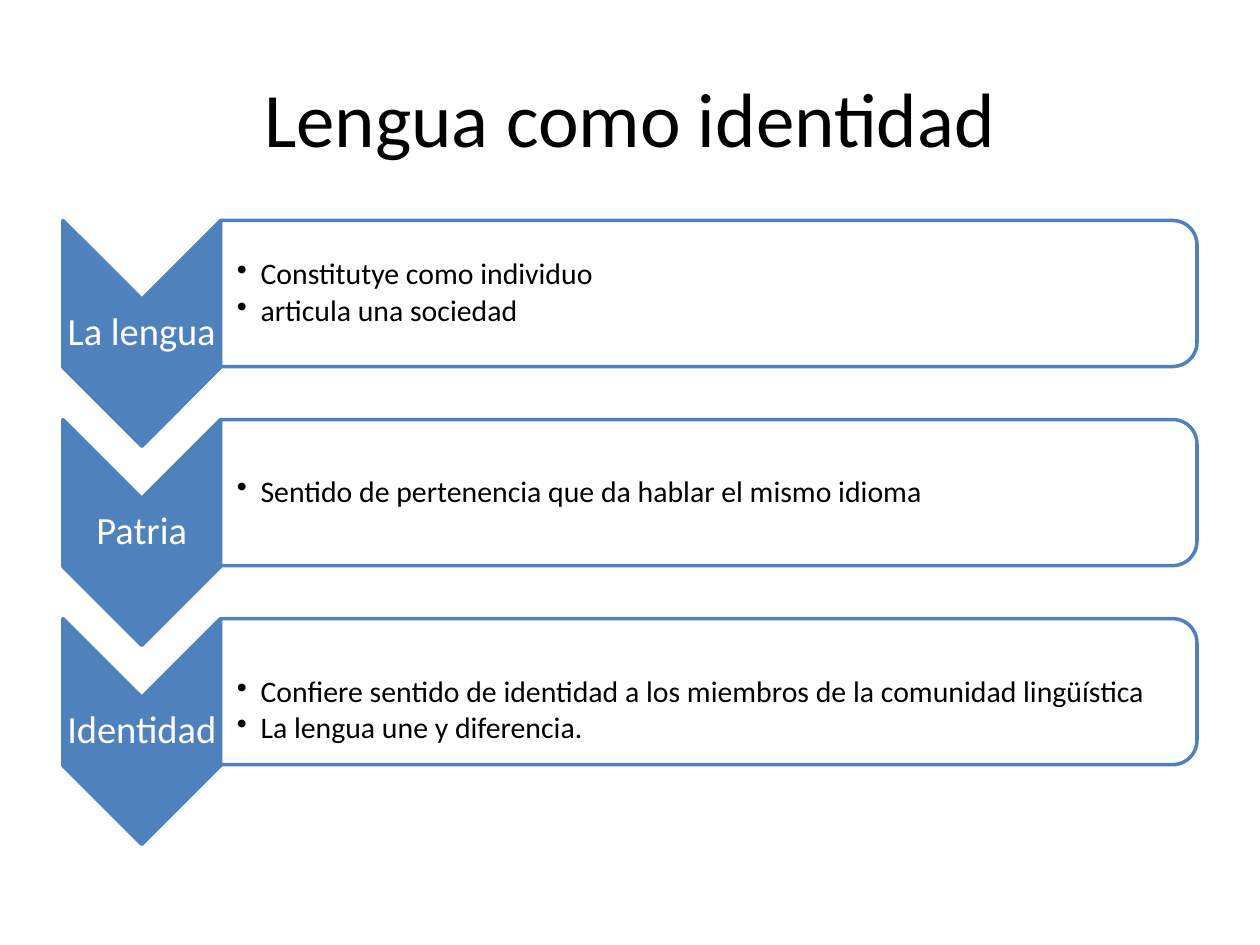
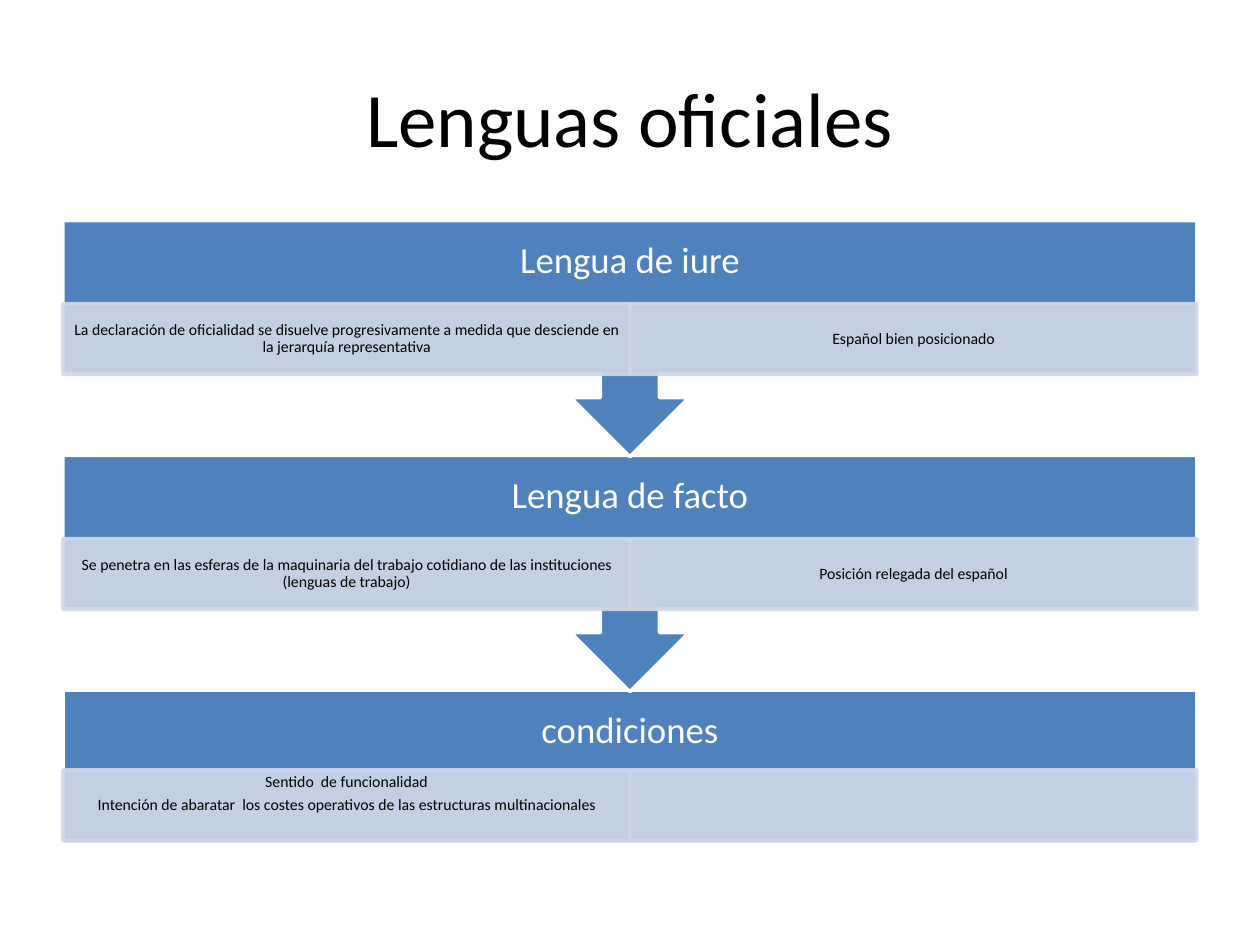
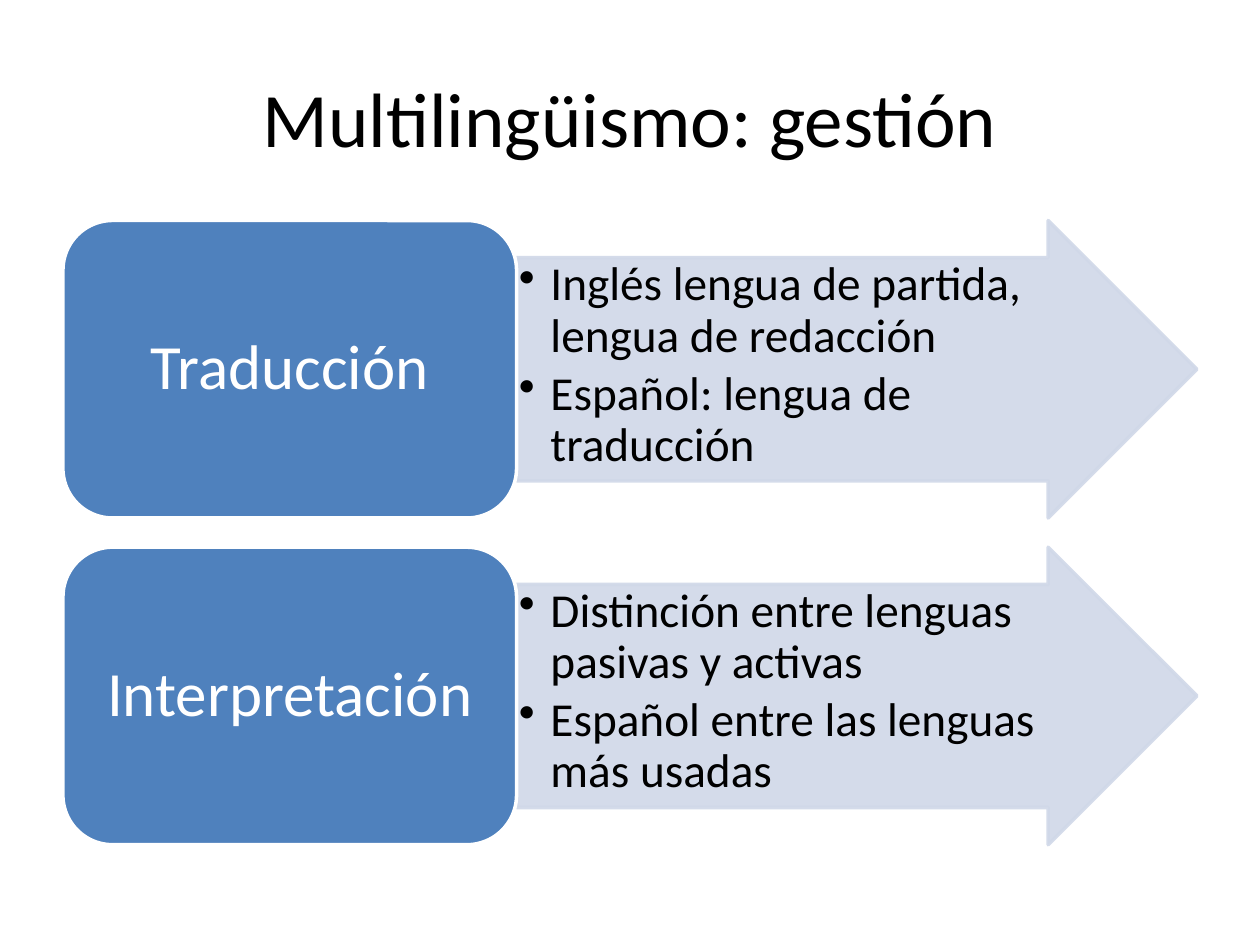
from dataclasses import dataclass

from lxml.etree import SubElement
from pptx import Presentation
from pptx.dml.color import RGBColor
from pptx.enum.shapes import MSO_SHAPE
from pptx.enum.text import MSO_ANCHOR, PP_ALIGN
from pptx.oxml.ns import qn
from pptx.util import Pt


@dataclass(frozen=True)
class Theme:
    font: str = "Calibri"
    black: str = "000000"
    white: str = "FFFFFF"
    blue: str = "4F81BD"
    pale: str = "D0D8E8"
    title: float = 44
    chevron: float = 22
    panel: float = 17
    header: float = 21
    cell: float = 9
    block: float = 36
    arrow: float = 27
    line: float = 2
    opacity: int = 90
    left: float = 36
    top: float = 126
    width: float = 648


THEME = Theme()

# label, bullets, extra space above the bullets
IDENTITY = [
    ("La lengua", ["Constitutye como individuo", "articula una sociedad"], 0),
    ("Patria", ["Sentido de pertenencia que da hablar el mismo idioma"], 0),
    ("Identidad", [
        "Confiere sentido de identidad a los miembros de la comunidad lingüística",
        "La lengua une y diferencia.",
    ], 22),
]

# heading, left cell, right cell, extra space below the cell text
OFFICIAL = [
    ("Lengua de iure",
     ["La declaración de oficialidad se disuelve progresivamente a medida que "
      "desciende en la jerarquía representativa"],
     ["Español bien posicionado"], 0),
    ("Lengua de facto",
     ["Se penetra en las esferas de la maquinaria del trabajo cotidiano de las "
      "instituciones (lenguas de trabajo)"],
     ["Posición relegada del español"], 0),
    ("condiciones",
     ["Sentido  de funcionalidad",
      "Intención de abaratar  los costes operativos de las estructuras multinacionales"],
     [], 13),
]

MANAGEMENT = [
    ("Traducción", ["Inglés lengua de partida, lengua de redacción",
                    "Español: lengua de traducción"]),
    ("Interpretación", ["Distinción entre lenguas pasivas y activas",
                        "Español entre las lenguas más usadas"]),
]


def add_titled_slide(deck, title):
    slide = deck.slides.add_slide(deck.slide_layouts[5])
    box = slide.shapes.title
    box.left, box.top, box.width, box.height = Pt(36), Pt(21.6), Pt(648), Pt(90)
    box.text_frame.text = title
    box.text_frame.vertical_anchor = MSO_ANCHOR.MIDDLE
    para = box.text_frame.paragraphs[0]
    para.alignment = PP_ALIGN.CENTER
    style_runs(para, THEME.title, THEME.black)
    return slide


def style_runs(para, size, color):
    for span in para.runs:
        span.font.name = THEME.font
        span.font.size = Pt(size)
        span.font.color.rgb = RGBColor.from_string(color)


def write(shape, lines, size, color, margins, indent=0, anchor=MSO_ANCHOR.MIDDLE):
    """Fill a shape with centred lines, or with bullets when indent is given."""
    frame = shape.text_frame
    frame.word_wrap = True
    frame.vertical_anchor = anchor
    (frame.margin_left, frame.margin_top,
     frame.margin_right, frame.margin_bottom) = map(Pt, margins)
    frame.text = "\n".join(lines)
    for para in frame.paragraphs:
        para.alignment = PP_ALIGN.LEFT if indent else PP_ALIGN.CENTER
        para.line_spacing = 0.9
        para.space_after = Pt(round(size * (0.15 if indent else 0.35), 1))
        style_runs(para, size, color)
        if indent:
            properties = para._p.get_or_add_pPr()
            properties.set("marL", str(Pt(indent)))
            properties.set("indent", str(-Pt(indent)))
            SubElement(properties, qn("a:buChar"), char="•")


def add_block(slide, kind, left, top, width, height, fill, line, see_through=False):
    shape = slide.shapes.add_shape(kind, Pt(left), Pt(top), Pt(width), Pt(height))
    shape.shadow.inherit = False
    shape.fill.solid()
    shape.fill.fore_color.rgb = RGBColor.from_string(fill)
    shape.line.color.rgb = RGBColor.from_string(line)
    shape.line.width = Pt(THEME.line)
    if see_through:
        for color in shape._element.spPr.iter(qn("a:srgbClr")):
            if color.get("val") == fill:
                SubElement(color, qn("a:alpha"), val=str(THEME.opacity * 1000))
    return shape


def add_turned_block(slide, kind, left, top, width, height, *colors):
    """Add a shape turned by 90 degrees that covers the given area."""
    shift = (width - height) / 2
    shape = add_block(slide, kind, left + shift, top - shift, height, width, *colors)
    shape.rotation = 90


def add_text(slide, left, top, width, height, *text, **options):
    box = slide.shapes.add_textbox(Pt(left), Pt(top), Pt(width), Pt(height))
    write(box, *text, **options)


def build_identity(deck):
    slide = add_titled_slide(deck, "Lengua como identidad")
    pitch, chevron_width, chevron_height, panel_height = 113.75, 90, 129, 83.5
    label_height = 39
    panel_left = THEME.left + chevron_width
    panel_width = THEME.width - chevron_width
    for row, (label, bullets, space_above) in enumerate(IDENTITY):
        top = THEME.top + row * pitch
        add_turned_block(slide, MSO_SHAPE.CHEVRON, THEME.left, top,
                         chevron_width, chevron_height, THEME.blue, THEME.blue)
        add_text(slide, THEME.left, top + (chevron_height - label_height) / 2,
                 chevron_width, label_height, [label],
                 THEME.chevron, THEME.white, (1.4,) * 4)
        add_turned_block(slide, MSO_SHAPE.ROUND_2_SAME_RECTANGLE, panel_left, top,
                         panel_width, panel_height, THEME.white, THEME.blue, True)
        add_text(slide, panel_left, top + 4, panel_width - 4, panel_height - 8,
                 bullets, THEME.panel, THEME.black, (9.4, 0.7 + space_above, 0.7, 0.7),
                 indent=13.5)


def build_official(deck):
    slide = add_titled_slide(deck, "Lenguas oficiales")
    pitch, callout_height, last_height = 134.25, 135, 88
    header_height, cell_height = 47.5, 40.5
    cell_width = THEME.width / 2
    # Upper steps come last, so that their arrow tips lie over the next step.
    for row, (heading, *cells, space_below) in reversed(list(enumerate(OFFICIAL))):
        top = THEME.top + row * pitch
        is_last = row == len(OFFICIAL) - 1
        kind = MSO_SHAPE.RECTANGLE if is_last else MSO_SHAPE.DOWN_ARROW_CALLOUT
        height = last_height if is_last else callout_height
        add_block(slide, kind, THEME.left, top, THEME.width, height,
                  THEME.blue, THEME.white)
        add_text(slide, THEME.left, top, THEME.width, header_height, [heading],
                 THEME.header, THEME.white, (11.5,) * 4)
        cell_top = top + header_height - (2 if is_last else 0)
        for column, lines in enumerate(cells):
            cell = add_block(slide, MSO_SHAPE.RECTANGLE,
                             THEME.left + column * cell_width, cell_top,
                             cell_width, cell_height, THEME.pale, THEME.pale, True)
            if lines:
                write(cell, lines, THEME.cell, THEME.black,
                      (5, 0.8, 5, 0.8 + space_below))


def build_management(deck):
    slide = add_titled_slide(deck, "Multilingüismo: gestión")
    pitch, height = 186.7, 170
    block_width = THEME.width * 0.4
    for row, (label, bullets) in enumerate(MANAGEMENT):
        top = THEME.top + row * pitch
        arrow = add_block(slide, MSO_SHAPE.RIGHT_ARROW, THEME.left + block_width, top,
                          THEME.width - block_width, height,
                          THEME.pale, THEME.pale, True)
        arrow.adjustments[0] = 0.75
        arrow.adjustments[1] = 0.5
        write(arrow, bullets, THEME.arrow, THEME.black, (1.4,) * 4,
              indent=18, anchor=MSO_ANCHOR.TOP)
        block = add_block(slide, MSO_SHAPE.ROUNDED_RECTANGLE, THEME.left, top,
                          block_width, height, THEME.blue, THEME.white)
        write(block, [label], THEME.block, THEME.white, (10.8, 5.4, 10.8, 5.4))


def main():
    deck = Presentation()
    deck.slide_width, deck.slide_height = Pt(720), Pt(540)
    build_identity(deck)
    build_official(deck)
    build_management(deck)
    deck.save("out.pptx")


if __name__ == "__main__":
    main()
